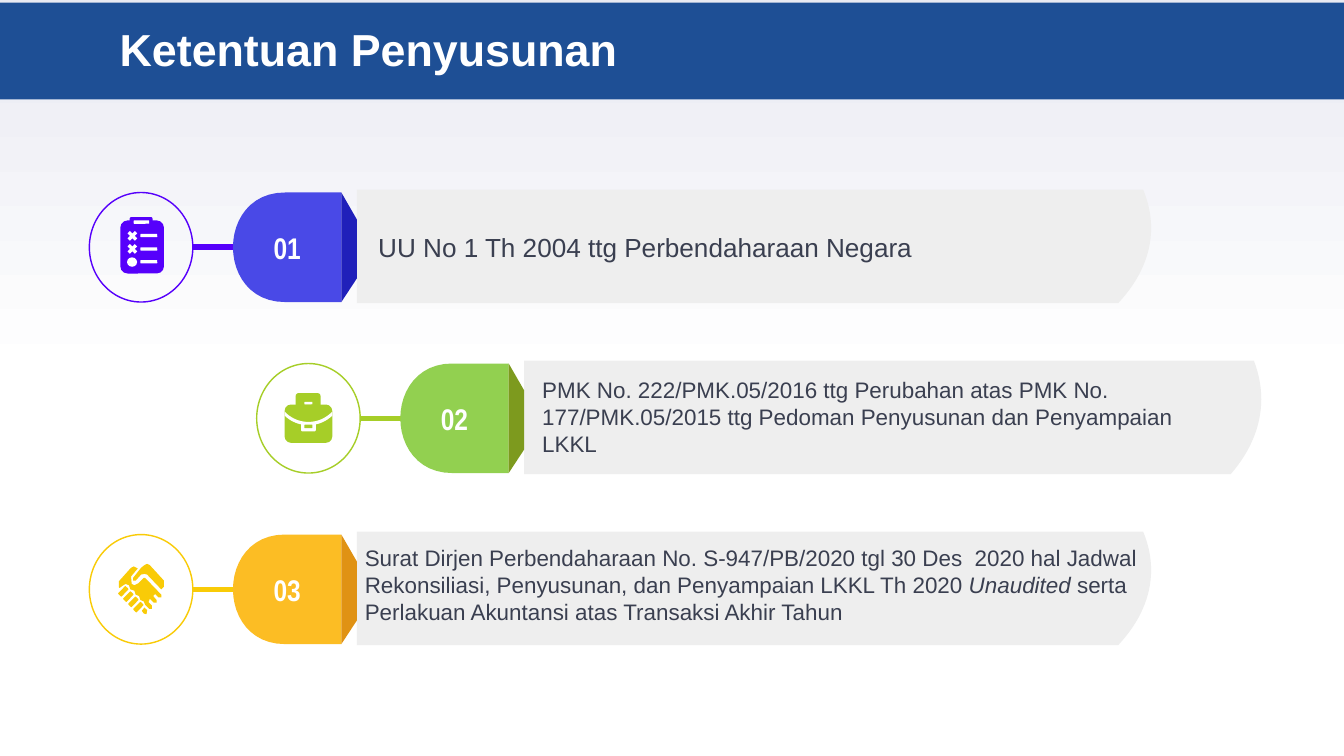
from dataclasses import dataclass
from typing import NamedTuple

from pptx import Presentation
from pptx.dml.color import RGBColor
from pptx.enum.shapes import MSO_CONNECTOR, MSO_SHAPE
from pptx.enum.text import MSO_ANCHOR, PP_ALIGN
from pptx.oxml.ns import qn
from pptx.util import Inches, Pt

RECT, ROUND, OVAL, CROSS = (MSO_SHAPE.RECTANGLE, MSO_SHAPE.ROUNDED_RECTANGLE,
                            MSO_SHAPE.OVAL, MSO_SHAPE.MATH_MULTIPLY)
STRAIGHT = MSO_CONNECTOR.STRAIGHT
TOP, MIDDLE = MSO_ANCHOR.TOP, MSO_ANCHOR.MIDDLE
LEFT, CENTER = PP_ALIGN.LEFT, PP_ALIGN.CENTER

# The slide is a grid of square cells; every length below counts cells.
COLUMNS, ROWS = 200, 112.5
CELL = Inches(0.1)
FIRST_ROW, ROW_PITCH = 36.8, 25.45
FIRST_COLUMN, INDENT = 13.3, 24.9
RING_WIDTH, BADGE_HEIGHT = 15.4, 16.3
BADGE_LEFT, FOLD_LEFT, BAND_LEFT = 21.0, 37.5, 39.8
BAND_RISE, BAND_HEIGHT = 8.6, 16.9


@dataclass(frozen=True)
class Theme:
    font: str = "Arial"
    badge_font: str = "Arial Narrow"
    white: str = "FFFFFF"
    haze: str = "E9EAF2"
    banner: str = "1E4F95"
    band: str = "EEEEEE"
    text: str = "3A3F50"
    title_size: int = 48
    badge_size: int = 32


THEME = Theme()


class Point(NamedTuple):
    x: float
    y: float


class Mark(NamedTuple):
    """A preset shape of an icon, measured from the centre of its ring."""
    kind: int
    x: float
    y: float
    width: float
    height: float
    cut_out: bool = False
    turn: float = 0


class Patch(NamedTuple):
    """A free outline of an icon, measured from the centre of its ring."""
    points: list
    cut_out: bool = False


class Span(NamedTuple):
    text: str
    italic: bool = False


@dataclass(frozen=True)
class Rule:
    number: str
    indent: float
    accent: str
    badge: str
    fold: str
    band_width: float
    text_left: float
    text_width: float
    text_rise: float
    size: int
    spans: tuple
    icon: tuple


def curve(a: tuple, b: tuple, c: tuple, d: tuple, steps: int = 24) -> list:
    """Points along a cubic Bezier curve."""
    shares = [step / steps for step in range(steps + 1)]
    return [Point(*((1 - t) ** 3 * p + 3 * (1 - t) ** 2 * t * q
                    + 3 * (1 - t) * t ** 2 * r + t ** 3 * s
                    for p, q, r, s in zip(a, b, c, d))) for t in shares]


CLIPBOARD = (
    Mark(ROUND, -3.1, -4.0, 6.5, 7.9),
    Mark(ROUND, -1.7, -4.5, 3.4, 1.5),
    Mark(ROUND, -1.1, -4.0, 2.3, 0.5, True),
    *(Mark(ROUND, -0.1, y, 2.5, 0.5, True) for y in (-2.0, 0, 1.9)),
    *(Mark(CROSS, -2.35, y, 2.1, 2.1, True) for y in (-2.75, -0.8)),
    Mark(OVAL, -2.1, 1.5, 1.5, 1.4, True),
)
BRIEFCASE = (
    Mark(ROUND, -1.9, -3.75, 3.7, 2.5),
    Mark(ROUND, -0.6, -2.45, 1.2, 0.4, True),
    Mark(ROUND, -3.55, -2.05, 7.1, 5.7),
    Patch(curve((-3.55, -1.0), (-1.6, 1.05), (1.6, 1.05), (3.55, -1.0))
          + curve((3.55, -0.4), (1.6, 1.5), (-1.6, 1.5), (-3.55, -0.4)), True),
    Mark(ROUND, -1.1, 0.6, 2.2, 1.35, True),
    Mark(ROUND, -0.6, 0.95, 1.2, 0.5),
)
HANDSHAKE = (
    *(Mark(ROUND, -3.45 + 0.75 * i, -0.05 + 0.78 * i, 1.6, 0.7, turn=-46) for i in range(4)),
    Patch([(0.5, 2.7), (0.1, 3.2), (0.4, 3.6), (0.8, 3.7), (0.9, 3.1)]),
    Patch([(-1.1, -3.4), (-1.5, -3.2), (-3.3, -1.2), (-3.3, -0.3), (-3.2, -0.2),
           (-2.8, -0.5), (-2.3, -0.8), (-1.8, -0.6), (-1.6, 0), (-1, 0.2),
           (-0.8, 0.8), (-0.3, 1), (-0.1, 1.6), (0.4, 1.8), (0.6, 2.3),
           (1.2, 2.9), (1.6, 2.9), (1.6, 2.4), (1.1, 1.9), (1.3, 1.4),
           (1.9, 2), (2.3, 2), (2.3, 1.6), (1.8, 1), (2.1, 0.7), (2.6, 1.2),
           (3, 1.2), (3, 0.8), (0.6, -1.7), (0.4, -1.7), (-0.4, -0.9),
           (-1, -0.6), (-1.4, -0.8), (-1.5, -1.9), (-0.5, -3.1)]),
    Patch([(0.9, -3.8), (0.5, -3.6), (0, -3.2), (-1.2, -1.7), (-1.2, -1.3),
           (-0.8, -1.3), (0, -2.2), (0.5, -2.3), (0.9, -2.2), (3, 0),
           (3.4, -0.4), (3.4, -1.3), (1.3, -3.6)]),
)

RULES = (
    Rule("01", 0, "5600FB", "4949E7", "2020BA", 119.4, 42.0, 110, 0, 28,
         (Span("UU No 1 Th 2004 ttg Perbendaharaan Negara"),), CLIPBOARD),
    Rule("02", INDENT, "A6CE28", "92D050", "7D9A1E", 110.8, 41.5, 104.4, 0.3, 24,
         (Span("PMK No. 222/PMK.05/2016 ttg Perubahan atas PMK No. 177/PMK.05/2015 "
               "ttg Pedoman Penyusunan dan Penyampaian LKKL"),), BRIEFCASE),
    Rule("03", 0, "F9CB07", "FCBD24", "E09214", 119.4, 40.0, 120.8, 0.7, 24,
         (Span("Surat Dirjen Perbendaharaan No. S-947/PB/2020 tgl 30 Des  2020 hal Jadwal "
               "Rekonsiliasi, Penyusunan, dan Penyampaian LKKL Th 2020 "),
          Span("Unaudited", True),
          Span(" serta Perlakuan Akuntansi atas Transaksi Akhir Tahun")), HANDSHAKE),
)


def cells(*counts: float) -> list:
    return [round(count * CELL) for count in counts]


def paint(shape, color: str) -> None:
    shape.shadow.inherit = False
    shape.fill.solid()
    shape.fill.fore_color.rgb = RGBColor.from_string(color)
    shape.line.fill.background()


def add_outline(slide, points: list, origin: Point, color: str):
    corners = [cells(origin.x + x, origin.y + y) for x, y in points]
    builder = slide.shapes.build_freeform(*corners[0])
    builder.add_line_segments(corners[1:], close=True)
    shape = builder.convert_to_shape()
    paint(shape, color)
    return shape


def write(shape, spans: tuple, size: int, color: str, font: str = THEME.font,
          bold: bool = False, align=LEFT, anchor=MIDDLE) -> None:
    frame = shape.text_frame
    frame.word_wrap = True
    frame.vertical_anchor = anchor
    para = frame.paragraphs[0]
    para.alignment = align
    para.font.name, para.font.size, para.font.bold = font, Pt(size), bold
    para.font.color.rgb = RGBColor.from_string(color)
    for span in spans:
        run = para.add_run()
        run.text = span.text
        if span.italic:
            run.font.italic = True


def add_icon(slide, icon: tuple, center: Point, color: str) -> None:
    for part in icon:
        fill = THEME.white if part.cut_out else color
        if isinstance(part, Patch):
            add_outline(slide, part.points, center, fill)
            continue
        shape = slide.shapes.add_shape(part.kind, *cells(
            center.x + part.x, center.y + part.y, part.width, part.height))
        shape.rotation = part.turn
        paint(shape, fill)


def add_ring(slide, left: float, middle: float, color: str) -> None:
    """Draw the ring and the bar that ties it to its badge."""
    accent = RGBColor.from_string(color)
    ring = slide.shapes.add_shape(OVAL, *cells(
        left, middle - BADGE_HEIGHT / 2, RING_WIDTH, BADGE_HEIGHT))
    ring.shadow.inherit = False
    ring.fill.background()
    bar = slide.shapes.add_connector(STRAIGHT, *cells(
        left + RING_WIDTH, middle, left + BADGE_LEFT + 0.4, middle))
    properties = bar.element.find(qn("p:spPr"))
    for shape, width in ((ring, 1.5), (bar, 6)):
        shape.line.color.rgb = accent
        shape.line.width = Pt(width)
    properties.append(properties.makeelement(qn("a:effectLst"), {}))


def add_rule(slide, rule: Rule, middle: float) -> None:
    left, top = FIRST_COLUMN + rule.indent, middle - BADGE_HEIGHT / 2
    width, height = rule.band_width, BAND_HEIGHT
    add_ring(slide, left, middle, rule.accent)
    dome = curve((8.1, 0), (-2.2, 0), (-2.2, BADGE_HEIGHT), (8.1, BADGE_HEIGHT))
    badge = add_outline(slide, dome + [(16.5, BADGE_HEIGHT), (16.5, 0)],
                        Point(left + BADGE_LEFT, top), rule.badge)
    write(badge, (Span(rule.number),), THEME.badge_size, THEME.white,
          THEME.badge_font, True, CENTER)
    edge = curve((0.949 * width, height), (0.99 * width, 0.69 * height),
                 (width, 0.34 * height), (0.98 * width, 0))
    add_outline(slide, [(0, 0), (0, height)] + edge,
                Point(left + BAND_LEFT, middle - BAND_RISE), THEME.band)
    add_outline(slide, [(0, 0), (0, BADGE_HEIGHT), (2.3, 12.8), (2.3, 4.0)],
                Point(left + FOLD_LEFT, top), rule.fold)
    add_icon(slide, rule.icon, Point(left + RING_WIDTH / 2, middle), rule.accent)
    box = slide.shapes.add_textbox(*cells(
        left + rule.text_left, middle - rule.text_rise - 6.55, rule.text_width, 13.1))
    write(box, rule.spans, rule.size, THEME.text)


def add_heading(slide) -> None:
    fill = slide.background.fill
    fill.gradient()
    fill.gradient_angle = 90
    for stop, place, color in zip(fill.gradient_stops, (0.5, 1), (THEME.white, THEME.haze)):
        stop.position, stop.color.rgb = place, RGBColor.from_string(color)
    banner = slide.shapes.add_shape(RECT, *cells(0, 0.4, COLUMNS, 14.4))
    paint(banner, THEME.banner)
    title = slide.shapes.title
    title.left, title.top, title.width, title.height = cells(16.8, 3.7, COLUMNS - 16.8, 12.6)
    write(title, (Span("Ketentuan Penyusunan"),), THEME.title_size, THEME.white,
          bold=True, anchor=TOP)
    title.text_frame.paragraphs[0].line_spacing = 0.9
    banner.element.addnext(title.element)


def main() -> None:
    deck = Presentation()
    deck.slide_width, deck.slide_height = cells(COLUMNS, ROWS)
    slide = deck.slides.add_slide(deck.slide_layouts.get_by_name("Title Only"))
    add_heading(slide)
    for index, rule in enumerate(RULES):
        add_rule(slide, rule, FIRST_ROW + index * ROW_PITCH)
    deck.save("out.pptx")


if __name__ == "__main__":
    main()
